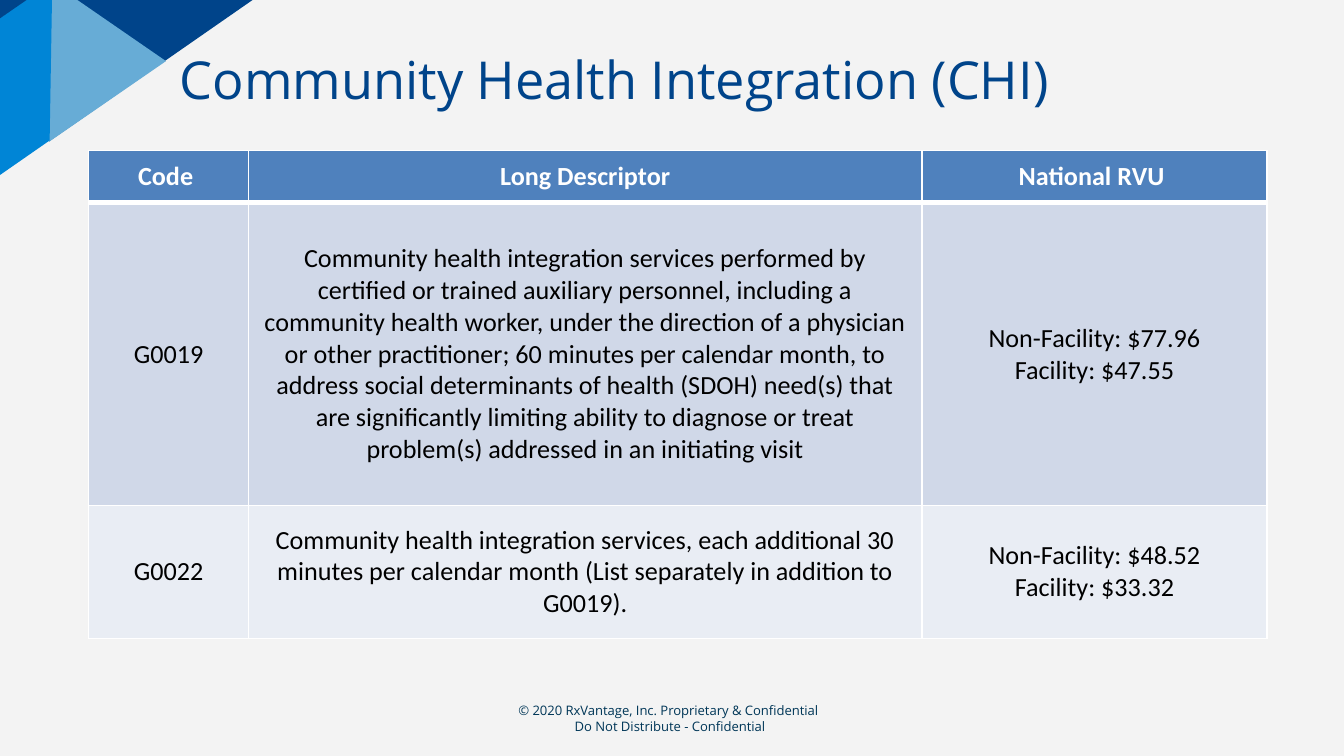
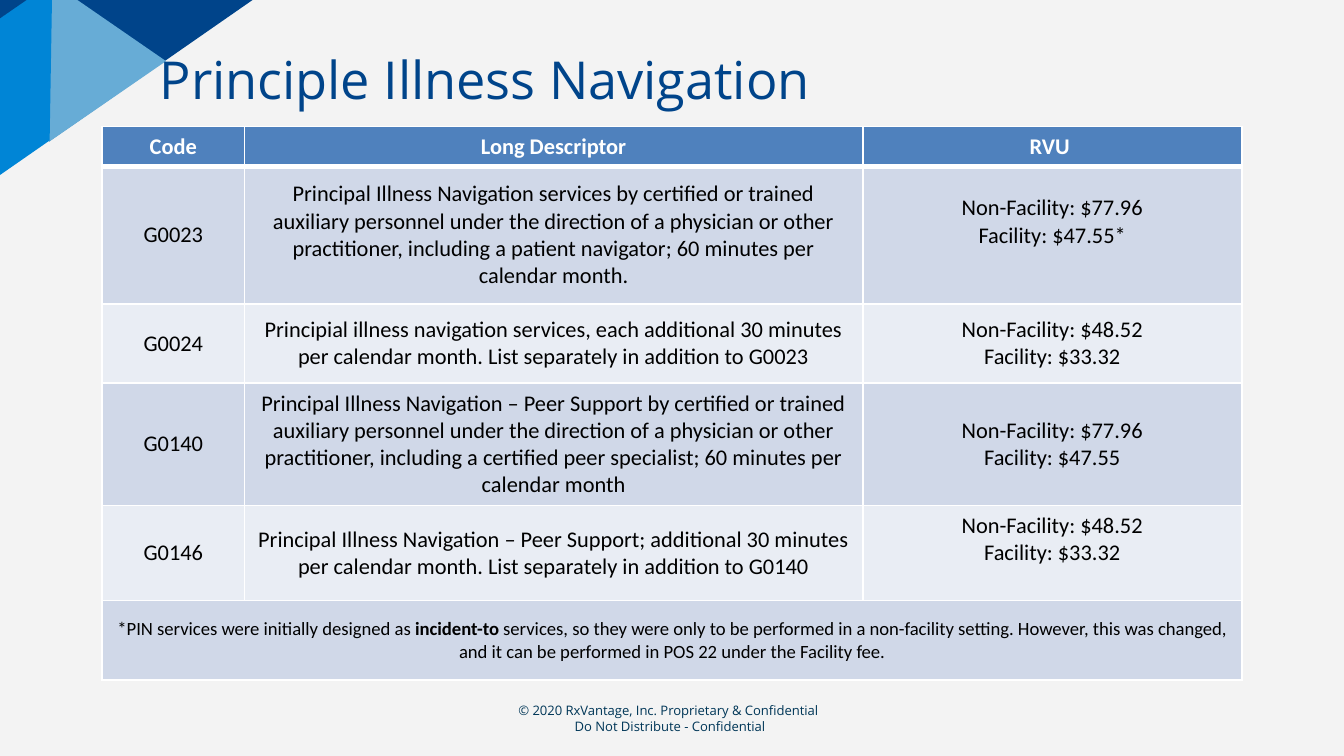
from lxml import etree
from pptx import Presentation
from pptx.dml.color import RGBColor
from pptx.enum.shapes import MSO_SHAPE as Shape
from pptx.enum.text import MSO_ANCHOR as Anchor, PP_ALIGN as Align
from pptx.oxml.ns import qn
from pptx.util import Inches, Pt

NAVY, BLUE, SKY, INK = "00448A", "0085D6", "67ACD6", "003657"
PAPER, WHITE, BLACK = "F3F3F3", "FFFFFF", "000000"
HEAD, BANDS = "4F81BD", ("D0D8E8", "E9EDF4")
HEADFONT, BODYFONT = "Open Sans", "Calibri"

FOOTER = ("© 2020 RxVantage, Inc. Proprietary & Confidential \n"
          "Do Not Distribute - Confidential")

# Corner art: preset, box, turn, adjustment, colour
CORNER = [
    (Shape.PARALLELOGRAM, (-0.45, -1.55, 5.48, 1.14), 145.2, 0.72, NAVY),
    (Shape.ISOSCELES_TRIANGLE, (0.2, 0.02, 1.2, 0.87), 90, 0.5, SKY),
    (Shape.PARALLELOGRAM, (-2.06, 0.63, 2.99, 0.96), 145.2, 0.72, BLUE),
    (Shape.ISOSCELES_TRIANGLE, (-1.14, -0.82, 1.82, 1.32), 90, 0.5, NAVY),
]

CHI = [
    ("Code ", "Long Descriptor", "National RVU "),
    ("G0019",
     "Community health integration services performed by certified or trained "
     "auxiliary personnel, including a community health worker, under the "
     "direction of a physician or other practitioner; 60 minutes per calendar "
     "month, to address social determinants of health (SDOH) need(s) that are "
     "significantly limiting ability to diagnose or treat problem(s) addressed "
     "in an initiating visit",
     "Non-Facility: $77.96\nFacility: $47.55"),
    ("G0022",
     "Community health integration services, each additional 30 minutes per "
     "calendar month (List separately in addition to G0019).",
     "Non-Facility: $48.52\nFacility: $33.32"),
]

PIN = [
    ("Code", "Long Descriptor", "RVU "),
    ("G0023",
     "Principal Illness Navigation services by certified or trained auxiliary "
     "personnel under the direction of a physician or other practitioner, "
     "including a patient navigator; 60 minutes per calendar month.",
     "Non-Facility: $77.96\nFacility: $47.55*"),
    ("G0024",
     "Principial illness navigation services, each additional 30 minutes per "
     "calendar month. List separately in addition to G0023",
     "Non-Facility: $48.52\nFacility: $33.32"),
    ("G0140",
     "Principal Illness Navigation – Peer Support by certified or trained "
     "auxiliary personnel under the direction of a physician or other "
     "practitioner, including a certified peer specialist; 60 minutes per "
     "calendar month",
     "Non-Facility: $77.96\nFacility: $47.55"),
    ("G0146",
     "Principal Illness Navigation – Peer Support; additional 30 minutes per "
     "calendar month. List separately in addition to G0140",
     "Non-Facility: $48.52\nFacility: $33.32"),
    ("", "", ""),
]

NOTE = [
    ("*PIN services were initially designed as ", False),
    ("incident-to ", True),
    ("services, so they were only to be performed in a non-facility setting. "
     "However, this was changed, and it can be performed in POS 22 under the "
     "Facility fee.", False),
]


def paint(fill, color):
    fill.solid()
    fill.fore_color.rgb = RGBColor.from_string(color)


def add_run(para, text, size, color, font, bold=False):
    run = para.add_run()
    run.text = text
    run.font.size = Pt(size)
    run.font.name = font
    run.font.bold = bold
    run.font.color.rgb = RGBColor.from_string(color)


def write(frame, text, size, color, font, align=Align.CENTER, bold=False):
    """Fill a frame with one paragraph per line of text."""
    for i, line in enumerate(text.split("\n")):
        para = frame.add_paragraph() if i else frame.paragraphs[0]
        para.alignment = align
        add_run(para, line, size, color, font, bold)


def add_text(slide, box, text, size, color, align):
    frame = slide.shapes.add_textbox(*map(Inches, box)).text_frame
    frame.word_wrap = True
    frame.margin_left = frame.margin_right = Inches(0.1)
    frame.margin_top = frame.margin_bottom = Inches(0.1)
    write(frame, text, size, color, HEADFONT, align)


def add_corner(slide):
    group = slide.shapes.add_group_shape()
    for kind, box, turn, adjust, color in CORNER:
        part = group.shapes.add_shape(kind, *map(Inches, box))
        part.adjustments[0] = adjust
        part.rotation = turn
        part.shadow.inherit = False
        part.line.fill.background()
        paint(part.fill, color)


def edge(cell, **widths):
    """Draw white cell borders; widths in points by side."""
    props = cell._tc.get_or_add_tcPr()
    for side in "LRTB":
        line = etree.SubElement(props, qn(f"a:ln{side}"),
                                w=str(Pt(widths.get(side, 1))))
        fill = etree.SubElement(line, qn("a:solidFill"))
        etree.SubElement(fill, qn("a:srgbClr"), val=WHITE)


def add_grid(slide, spot, cols, heights, rows, size):
    box = (*spot, sum(cols), sum(heights))
    grid = slide.shapes.add_table(len(rows), len(cols),
                                  *map(Inches, box)).table
    grid.first_row = grid.horz_banding = False
    for col, width in zip(grid.columns, cols):
        col.width = Inches(width)
    for r, (row, height) in enumerate(zip(rows, heights)):
        grid.rows[r].height = Inches(height)
        head = r == 0
        for c, text in enumerate(row):
            cell = grid.cell(r, c)
            edge(cell, T=3 if r == 1 else 1, B=3 if head else 1)
            paint(cell.fill, HEAD if head else BANDS[(r - 1) % 2])
            cell.vertical_anchor = Anchor.MIDDLE
            if text:
                write(cell.text_frame, text, size, WHITE if head else BLACK,
                      BODYFONT, bold=head)
    return grid


def add_note(grid, runs):
    """Merge the last row and write the note in it."""
    last = len(grid.rows) - 1
    cell = grid.cell(last, 0)
    cell.merge(grid.cell(last, len(grid.columns) - 1))
    para = cell.text_frame.paragraphs[0]
    para.alignment = Align.CENTER
    for text, bold in runs:
        add_run(para, text, 10, BLACK, BODYFONT, bold)


def add_page(deck, title, left):
    slide = deck.slides.add_slide(deck.slide_layouts[6])
    paint(slide.background.fill, PAPER)
    add_corner(slide)
    add_text(slide, (3.43, 5.13, 3.11, 0.35), FOOTER, 7, INK, Align.CENTER)
    add_text(slide, (left, 0.25, 8.19, 0.87), title, 28, NAVY, Align.LEFT)
    return slide


def main():
    deck = Presentation()
    deck.slide_width = Inches(10)
    deck.slide_height = deck.slide_width * 9 // 16

    page = add_page(deck, "Community Health Integration (CHI)", 1.24)
    add_grid(page, (0.66, 1.12), (1.19, 5.01, 2.57), (0.39, 2.25, 0.99),
             CHI, 14)

    page = add_page(deck, "Principle Illness Navigation", 1.09)
    grid = add_grid(page, (0.76, 0.94), (1.06, 4.6, 2.82),
                    (0.3, 1.02, 0.59, 0.91, 0.71, 0.59), PIN, 12)
    for r in (1, 4):
        grid.cell(r, 2).margin_bottom = Inches(0.25)
    add_note(grid, NOTE)

    deck.save("out.pptx")


if __name__ == "__main__":
    main()
